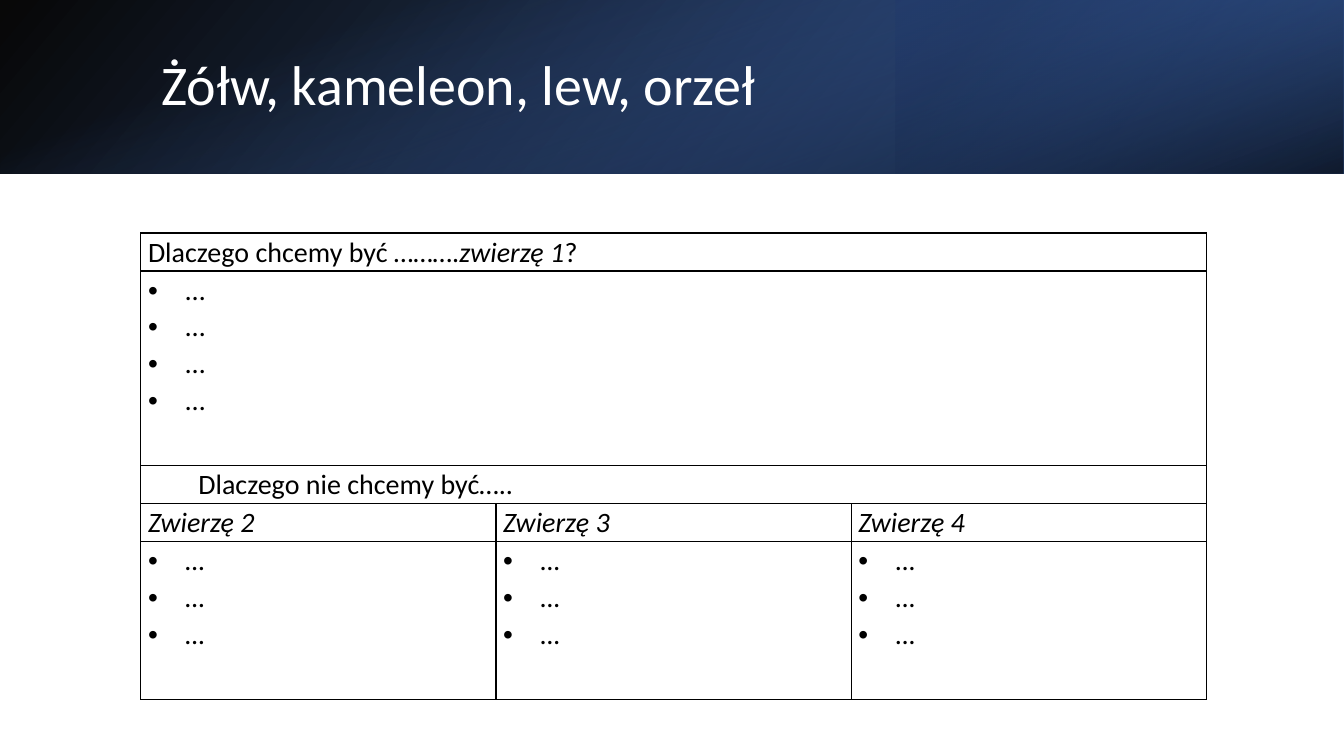
from dataclasses import dataclass

from lxml.etree import SubElement
from pptx import Presentation
from pptx.dml.color import RGBColor
from pptx.enum.shapes import MSO_SHAPE
from pptx.enum.text import MSO_ANCHOR, MSO_AUTO_SIZE, PP_ALIGN
from pptx.oxml import parse_xml
from pptx.oxml.ns import nsdecls, qn
from pptx.util import Cm, Pt


@dataclass(frozen=True)
class Theme:
    font: str = "Calibri"
    head: int = 40
    body: int = 20
    ink: str = "000000"
    light: str = "FFFFFF"
    navy: str = "203864"
    steel: str = "2F5597"
    blue: str = "4472C4"


THEME = Theme()
WIDE, BAND = 33.87, 4.37
DOTS = "…"


def apply(target, values):
    for name, value in values.items():
        setattr(target, name, value)


def write(para, text, size, color, italic=False):
    run = para.add_run()
    run.text = text
    apply(run.font, {"name": THEME.font, "size": Pt(size), "italic": italic})
    run.font.color.rgb = RGBColor.from_string(color)


def add_band(slide, box, stops, angle, turn=0, flip=False):
    """Add a gradient rectangle; each stop is place, colour, opacity in percent."""
    shape = slide.shapes.add_shape(MSO_SHAPE.RECTANGLE, *map(Cm, box))
    shape.rotation = turn
    shape.shadow.inherit = False
    shape.line.fill.background()
    props = shape.element.spPr
    if flip:
        props.find(qn("a:xfrm")).set("flipH", "1")
    marks = "".join(
        f'<a:gs pos="{place * 1000}"><a:srgbClr val="{color}">'
        f'<a:alpha val="{alpha * 1000}"/></a:srgbClr></a:gs>'
        for place, color, alpha in stops
    )
    grad = parse_xml(
        f'<a:gradFill {nsdecls("a")} rotWithShape="1"><a:gsLst>{marks}</a:gsLst>'
        f'<a:lin ang="{angle * 60000}" scaled="0"/></a:gradFill>'
    )
    props.find(qn("a:prstGeom")).addnext(grad)


def set_title(slide, text):
    title = slide.shapes.title
    slide.shapes.element.append(title.element)  # in front of the bands
    apply(title, {"left": Cm(3.81), "top": Cm(0.97),
                  "width": Cm(27.89), "height": Cm(2.44)})
    apply(title.text_frame, {"vertical_anchor": MSO_ANCHOR.MIDDLE, "word_wrap": True,
                             "auto_size": MSO_AUTO_SIZE.NONE})
    para = title.text_frame.paragraphs[0]
    apply(para, {"alignment": PP_ALIGN.LEFT, "line_spacing": 0.9})
    write(para, text, THEME.head, THEME.light)


def style_cell(cell):
    apply(cell, {"margin_left": Cm(0.18), "margin_right": Cm(0.18),
                 "margin_top": 0, "margin_bottom": 0})
    cell.fill.background()
    props = cell._tc.get_or_add_tcPr()
    for spot, side in enumerate(("lnL", "lnR", "lnT", "lnB")):
        props.insert(spot, parse_xml(
            f'<a:{side} {nsdecls("a")} w="{Pt(1)}"><a:solidFill>'
            f'<a:srgbClr val="{THEME.ink}"/></a:solidFill></a:{side}>'
        ))


def format_para(para, indent=0, hang=0, after=0):
    apply(para, {"alignment": PP_ALIGN.JUSTIFY, "line_spacing": 1.07,
                 "space_after": Pt(after)})
    props = para._p.get_or_add_pPr()
    apply_margins = {"marL": Cm(indent), "indent": Cm(-hang)}
    for name, value in apply_margins.items():
        props.set(name, str(value))
    return props


def fill_line(cell, parts, indent=0):
    """Write one paragraph from pairs of text and italic flag."""
    para = cell.text_frame.paragraphs[0]
    format_para(para, indent, after=8)
    for text, italic in parts:
        write(para, text, THEME.body, THEME.ink, italic)


def fill_list(cell, items, italic=False):
    frame = cell.text_frame
    for spot, item in enumerate(items):
        para = frame.add_paragraph() if spot else frame.paragraphs[0]
        props = format_para(para, indent=0.95, hang=0.95)
        SubElement(props, qn("a:buFont")).set("typeface", "Arial")
        SubElement(props, qn("a:buChar")).set("char", "•")
        write(para, item, THEME.body, THEME.ink, italic)


def add_grid(slide, heights, count):
    frame = slide.shapes.add_table(len(heights), count, Cm(3.55), Cm(5.87),
                                   Cm(26.85), Cm(sum(heights)))
    table = frame.table
    apply(table, {"first_row": False, "horz_banding": False})
    for row, height in zip(table.rows, heights):
        row.height = Cm(height)
    for cell in table.iter_cells():
        style_cell(cell)
    return table


def main():
    deck = Presentation()
    apply(deck, {"slide_width": Cm(WIDE), "slide_height": Cm(19.05)})
    slide = deck.slides.add_slide(deck.slide_layouts[5])

    add_band(slide, (0, 0, WIDE, BAND),
             [(0, THEME.ink, 96), (100, THEME.steel, 96)], 140, flip=True)
    add_band(slide, (22.58, 0, WIDE / 3, BAND),
             [(19, THEME.navy, 68), (100, THEME.blue, 79)], 320, turn=180, flip=True)
    side = (WIDE - BAND) / 2
    add_band(slide, (side, -side, BAND, WIDE),
             [(23, THEME.blue, 0), (99, THEME.ink, 74)], 340, turn=90)
    set_title(slide, "Żółw, kameleon, lew, orzeł")

    table = add_grid(slide, (0.96, 4.9, 0.96, 0.96, 3.98), 3)
    for row in range(3):
        table.cell(row, 0).merge(table.cell(row, 2))
    fill_line(table.cell(0, 0), [("Dlaczego chcemy być ……….", False),
                                 ("zwierzę 1", True), ("?", False)])
    fill_list(table.cell(1, 0), [DOTS] * 4)
    fill_line(table.cell(2, 0), [("Dlaczego nie chcemy być…..", False)], indent=1.27)
    for col in range(3):
        fill_line(table.cell(3, col), [(f"Zwierzę {col + 2}", True)])
        fill_list(table.cell(4, col), [DOTS] * 3, italic=True)
    deck.save("out.pptx")


if __name__ == "__main__":
    main()
